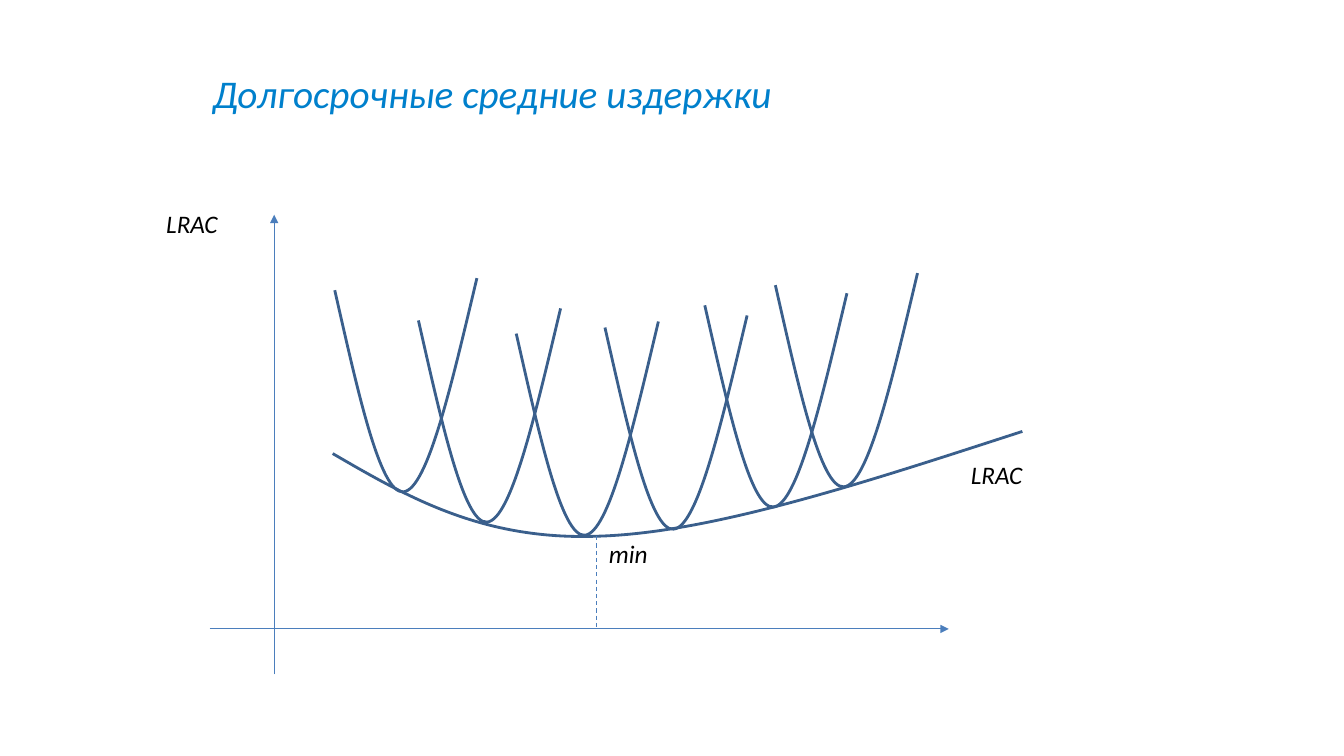
"""Build the slide on long-run average costs."""
from dataclasses import dataclass

from lxml.etree import SubElement
from pptx import Presentation
from pptx.dml.color import RGBColor as Rgb
from pptx.enum.dml import MSO_LINE as Dash
from pptx.enum.shapes import MSO_CONNECTOR as Conn
from pptx.enum.text import MSO_AUTO_SIZE as Fit
from pptx.oxml.ns import qn
from pptx.shapes.shapetree import GroupShapes as Group, SlideShapes as Tree
from pptx.util import Inches, Pt

COLORS = {"axis": "4B7EBC", "curve": "3A5F8C", "text": "000000", "title": "0080CC"}
FONT = "Calibri"
Point = tuple[float, float]


@dataclass
class Line:
    start: Point
    end: Point
    arrow: bool = True


@dataclass
class Label:
    text: str
    left: float
    top: float
    width: float
    height: float = 0.4
    size: int = 18
    color: str = "text"


AXES = [Line((2.72, 6.69), (2.72, 2.13)), Line((2.08, 6.24), (9.41, 6.24))]
DROP = Line((5.92, 5.32), (5.92, 6.24), False)
LONG = [(3.3, 4.5), (4.04, 4.93), (4.78, 5.36), (5.92, 5.32),
        (7.06, 5.29), (8.6, 4.78), (10.14, 4.28)]
SHORT = [(3.32, 2.88), (3.55, 3.89), (3.77, 4.9), (4, 4.88),
         (4.24, 4.86), (4.48, 3.81), (4.73, 2.76)]
SHIFTS = [(0, 0), (0.83, 0.3), (1.8, 0.43), (2.68, 0.37), (3.67, 0.15), (4.37, -0.05)]
LABELS = [Label("min", 5.94, 5.29, 0.59), Label("LRAC", 9.53, 4.51, 0.72),
          Label("LRAC", 1.55, 2.02, 0.72)]
TITLE = Label("Долгосрочные средние издержки", 2.01, 0.64, 5.99, 0.57, 28, "title")


def add_line(group: Group, line: Line) -> None:
    ends = [Inches(n) for n in line.start + line.end]
    shape = group.add_connector(Conn.STRAIGHT, *ends)
    shape.line.color.rgb = Rgb.from_string(COLORS["axis"])
    shape.line.width = Pt(0.75)
    props = shape._element.spPr
    if line.arrow:
        SubElement(props.find(qn("a:ln")), qn("a:tailEnd"), type="triangle")
    else:
        shape.line.dash_style = Dash.DASH
    SubElement(props, qn("a:effectLst"))


def add_curve(group: Group, points: list[Point], shift: Point = (0, 0)) -> None:
    first, *rest = [(Inches(x + shift[0]), Inches(y + shift[1])) for x, y in points]
    form = group.build_freeform(*first)
    form.add_line_segments(rest, close=False)
    shape = form.convert_to_shape()
    shape.shadow.inherit = False
    shape.fill.background()
    shape.line.color.rgb = Rgb.from_string(COLORS["curve"])
    shape.line.width = Pt(2)
    track = shape._element.find(".//" + qn("a:path"))
    steps = track.findall(qn("a:lnTo"))
    for i in range(0, len(steps), 3):
        bend = SubElement(track, qn("a:cubicBezTo"))
        for step in steps[i:i + 3]:
            bend.append(step[0])
            track.remove(step)


def add_label(shapes: Group | Tree, label: Label) -> None:
    spot = [Inches(n) for n in (label.left, label.top, label.width, label.height)]
    frame = shapes.add_textbox(*spot).text_frame
    frame.word_wrap = False
    frame.auto_size = Fit.SHAPE_TO_FIT_TEXT
    run = frame.paragraphs[0].add_run()
    run.text = label.text
    run.font.name = FONT
    run.font.size = Pt(label.size)
    run.font.italic = True
    run.font.color.rgb = Rgb.from_string(COLORS[label.color])


def main() -> None:
    deck = Presentation()
    deck.slide_width, deck.slide_height = Inches(13.33), Inches(7.5)
    slide = deck.slides.add_slide(deck.slide_layouts[6])
    graph = slide.shapes.add_group_shape().shapes
    for axis in AXES:
        add_line(graph, axis)
    add_curve(graph, LONG)
    for shift in SHIFTS:
        add_curve(graph, SHORT, shift)
    add_line(graph, DROP)
    for label in LABELS:
        add_label(graph, label)
    add_label(slide.shapes, TITLE)
    deck.save("out.pptx")


if __name__ == "__main__":
    main()
